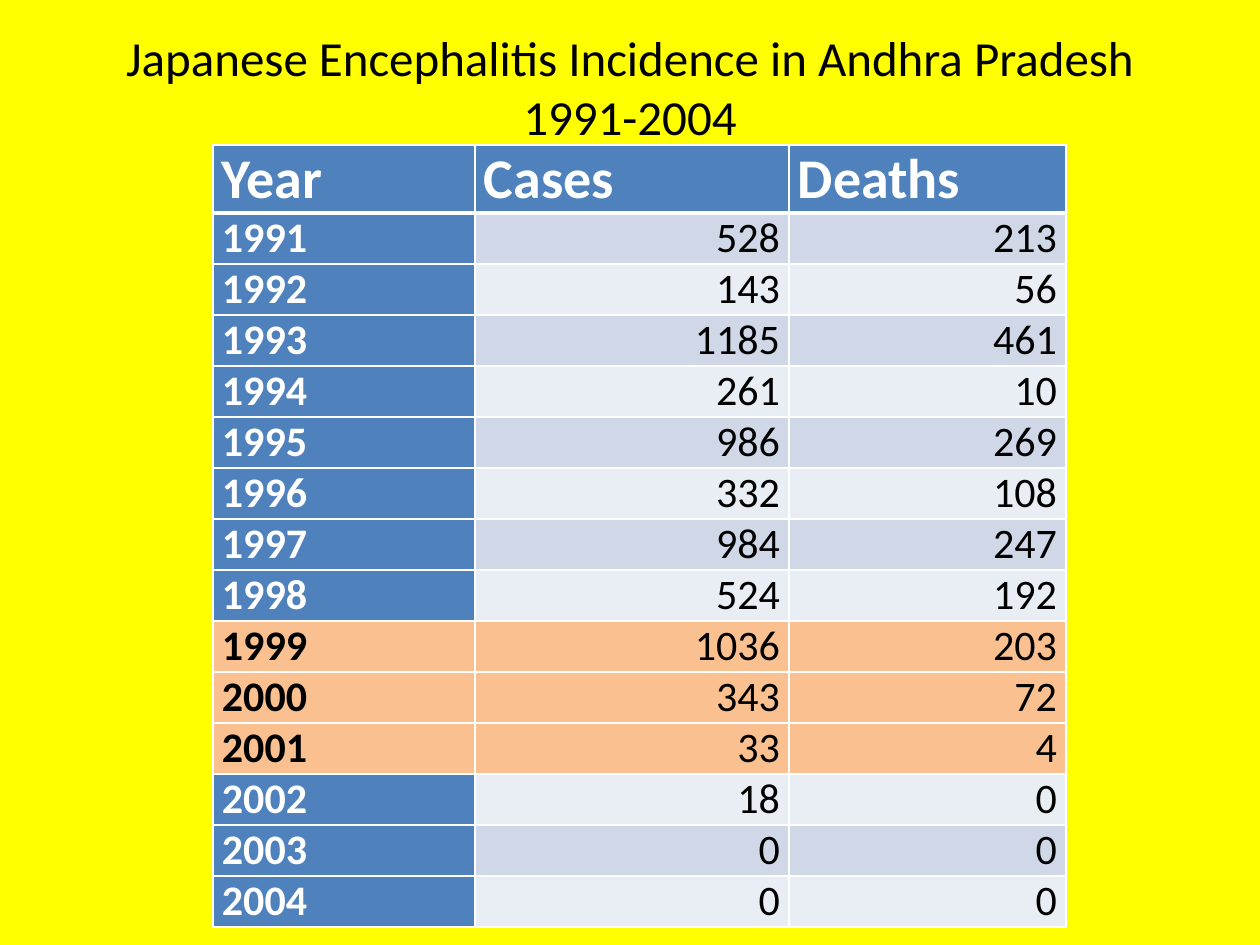
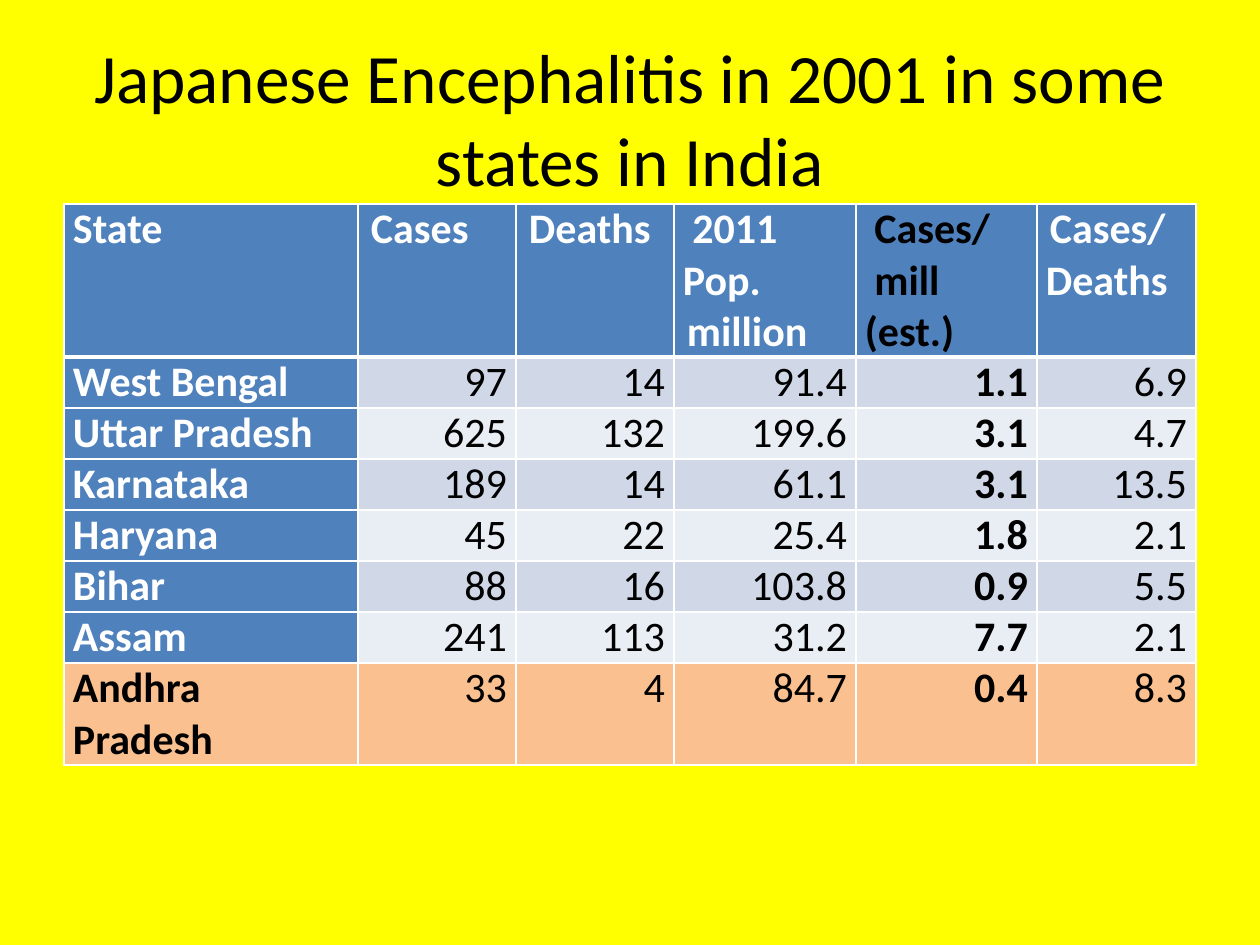
from lxml import etree
from pptx import Presentation
from pptx.dml.color import RGBColor
from pptx.enum.text import MSO_ANCHOR, PP_ALIGN
from pptx.oxml.ns import qn
from pptx.util import Emu, Pt

CENTER, LEFT, RIGHT = PP_ALIGN.CENTER, PP_ALIGN.LEFT, PP_ALIGN.RIGHT
MIDDLE = MSO_ANCHOR.MIDDLE

FONT = "Calibri"
COLORS = {
    "page": "FFFF00",
    "head": "4F81BD",
    "odd": "D0D8E8",
    "even": "E9EDF4",
    "marked": "FAC090",
    "dark": "000000",
    "light": "FFFFFF",
}
BODY_SIZE = 24
CELL_INSET = 9

YEARLY = [
    (1991, 528, 213), (1992, 143, 56), (1993, 1185, 461), (1994, 261, 10),
    (1995, 986, 269), (1996, 332, 108), (1997, 984, 247), (1998, 524, 192),
    (1999, 1036, 203), (2000, 343, 72), (2001, 33, 4), (2002, 18, 0),
    (2003, 0, 0), (2004, 0, 0),
]
STATES = [
    ("West Bengal", 97, 14, 91.4, 1.1, 6.9),
    ("Uttar Pradesh", 625, 132, 199.6, 3.1, 4.7),
    ("Karnataka", 189, 14, 61.1, 3.1, 13.5),
    ("Haryana", 45, 22, 25.4, 1.8, 2.1),
    ("Bihar", 88, 16, 103.8, 0.9, 5.5),
    ("Assam", 241, 113, 31.2, 7.7, 2.1),
    ("Andhra Pradesh", 33, 4, 84.7, 0.4, 8.3),
]
# Each heading is a list of (text, first-line indent in px)
YEARLY_HEADS = [[("Year", 0)], [("Cases", 0)], [("Deaths", 0)]]
STATE_HEADS = [
    [("State", 0)],
    [("Cases", 4)],
    [("Deaths", 4)],
    [(" 2011 Pop.", -9), ("million", 4)],
    [(" Cases/", -9), (" mill (est.)", -9)],
    [("Cases/Deaths", 4)],
]


def px(n):
    return Emu(round(n * 914400 / 126))


def rgb(name):
    return RGBColor.from_string(COLORS[name])


def add_run(p, text, size, color, bold=False):
    r = p.add_run()
    r.text = text
    r.font.name = FONT
    r.font.size = Pt(size)
    r.font.bold = bold
    r.font.color.rgb = rgb(color)


def add_page(prs):
    s = prs.slides.add_slide(prs.slide_layouts[6])
    s.background.fill.solid()
    s.background.fill.fore_color.rgb = rgb("page")
    return s


def add_title(s, text, height, size):
    tf = s.shapes.add_textbox(px(63), px(38), px(1134), px(height)).text_frame
    tf.word_wrap = True
    tf.vertical_anchor = MIDDLE
    p = tf.paragraphs[0]
    p.alignment = CENTER
    add_run(p, text, size, "dark")


def set_borders(cell, top, bottom):
    """White cell borders; widths in points."""
    tcPr = cell._tc.get_or_add_tcPr()
    for tag, width in (("lnL", 1), ("lnR", 1), ("lnT", top), ("lnB", bottom)):
        ln = etree.SubElement(tcPr, qn("a:" + tag), w=str(Pt(width)))
        fill = etree.SubElement(ln, qn("a:solidFill"))
        etree.SubElement(fill, qn("a:srgbClr"), val=COLORS["light"])


def style_cell(cell, fill, top=1, bottom=1):
    set_borders(cell, top, bottom)
    cell.fill.solid()
    cell.fill.fore_color.rgb = rgb(fill)
    cell.margin_left = cell.margin_right = px(CELL_INSET)
    cell.margin_top = cell.margin_bottom = 0


def add_data_table(s, box, widths, heights, heads, rows, head_size,
                   marked, bold_col=None):
    """Heading row, bold first column, banded numbers, marked rows."""
    left, top = box
    table = s.shapes.add_table(len(heights), len(widths), px(left), px(top),
                               px(sum(widths)), px(sum(heights))).table
    table.horz_banding = False
    for col, width in zip(table.columns, widths):
        col.width = px(width)
    for row, height in zip(table.rows, heights):
        row.height = px(height)

    # Heading row
    for c, lines in enumerate(heads):
        cell = table.cell(0, c)
        style_cell(cell, "head", bottom=3)
        tf = cell.text_frame
        color = "dark" if c == bold_col else "light"
        for i, (text, indent) in enumerate(lines):
            p = tf.add_paragraph() if i else tf.paragraphs[0]
            if indent:
                p._p.get_or_add_pPr().set("indent", str(px(indent)))
            add_run(p, text, head_size, color, True)

    # Data rows
    for i, values in enumerate(rows, 1):
        is_marked = values[0] in marked
        band = "marked" if is_marked else "odd" if i % 2 else "even"
        for c, value in enumerate(values):
            is_label = c == 0
            plain_label = is_label and not is_marked
            cell = table.cell(i, c)
            style_cell(cell, "head" if plain_label else band,
                       top=3 if i == 1 else 1)
            p = cell.text_frame.paragraphs[0]
            p.alignment = LEFT if is_label else RIGHT
            add_run(p, str(value), BODY_SIZE,
                    "light" if plain_label else "dark",
                    is_label or c == bold_col)


def yearly_slide(prs):
    s = add_page(prs)
    add_title(s, "Japanese Encephalitis Incidence in Andhra Pradesh 1991-2004",
              97, 28)
    add_data_table(s, (213, 145), [262, 314, 277], [68] + [51] * len(YEARLY),
                   YEARLY_HEADS, YEARLY, 32, marked=(1999, 2000, 2001))


def states_slide(prs):
    s = add_page(prs)
    add_title(s, "Japanese Encephalitis in 2001 in some states in India",
              158, 39.6)
    add_data_table(s, (64, 204), [294, 158, 158, 182, 181, 159],
                   [153] + [51] * (len(STATES) - 1) + [102],
                   STATE_HEADS, STATES, BODY_SIZE,
                   marked=("Andhra Pradesh",), bold_col=4)


def main():
    prs = Presentation()
    prs.slide_width, prs.slide_height = px(1260), px(945)
    yearly_slide(prs)
    states_slide(prs)
    prs.save("out.pptx")


if __name__ == "__main__":
    main()
